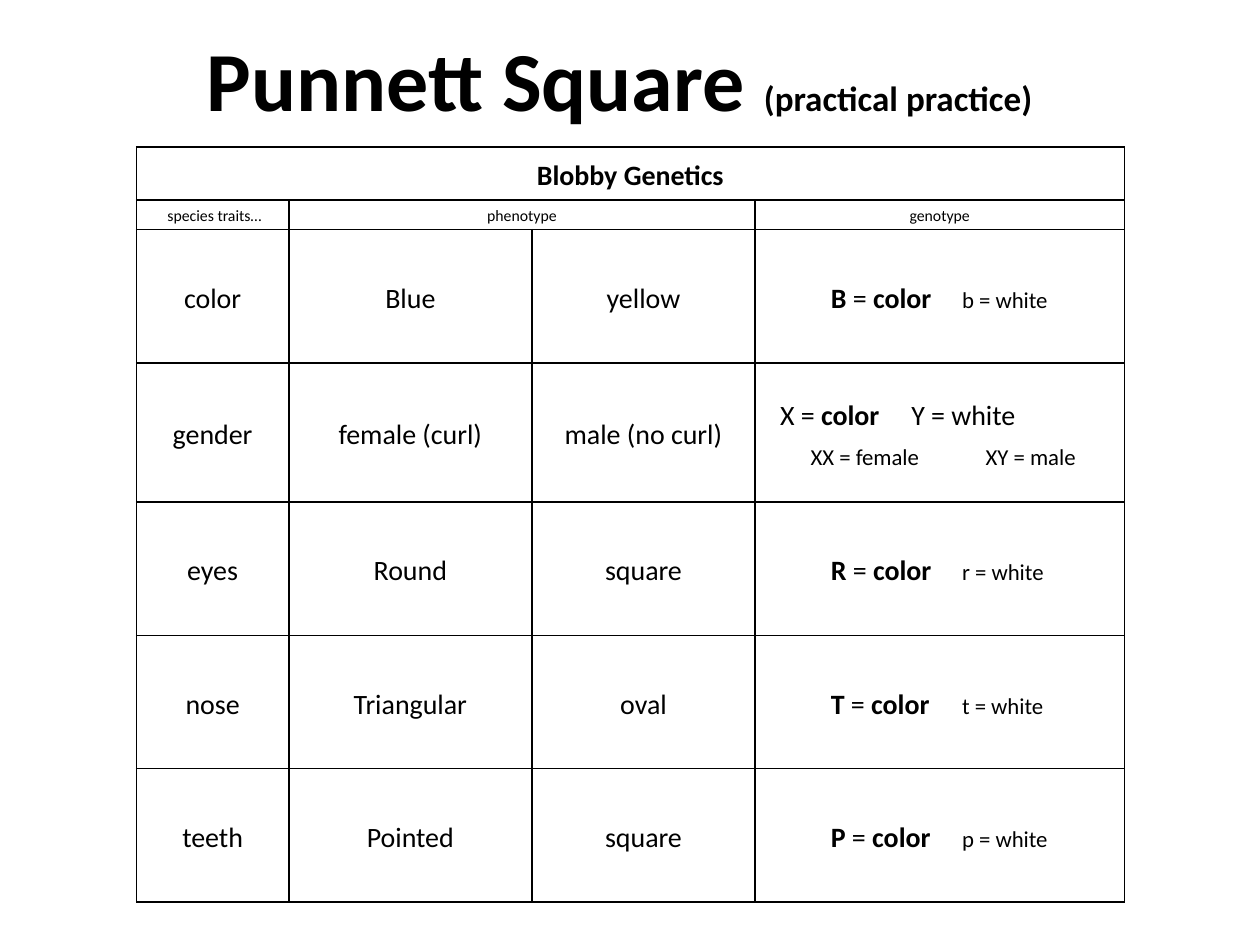
from lxml.etree import SubElement
from pptx import Presentation
from pptx.dml.color import RGBColor
from pptx.enum.text import MSO_ANCHOR, MSO_AUTO_SIZE, PP_ALIGN
from pptx.oxml.ns import qn
from pptx.util import Pt

BLACK = RGBColor(0, 0, 0)
FONT = "Calibri"
BODY_SIZE, SMALL_SIZE, HEADING_SIZE = 16, 13, 9
COLUMN_WIDTHS = [87, 139, 127.5, 211]
ROW_HEIGHTS = [30.3, 16.9, 76.3, 79.3, 76.3, 76.3, 76.3]
CELL_FORMAT = {
    "vertical_anchor": MSO_ANCHOR.MIDDLE,
    "margin_left": Pt(4.3),
    "margin_right": Pt(4.3),
    "margin_top": 0,
    "margin_bottom": 0,
}
TRAITS = [
    ("color", "Blue", "yellow", "B"),
    ("gender", "female (curl)", "male (no curl)", None),
    ("eyes", "Round", "square", "R"),
    ("nose", "Triangular", "oval", "T"),
    ("teeth", "Pointed", "square", "P"),
]


def set_format(target, values):
    for name, value in values.items():
        setattr(target, name, value)


def add_runs(paragraph, runs):
    for text, size, bold in runs:
        run = paragraph.add_run()
        run.text = text
        set_format(run.font, {"name": FONT, "size": Pt(size), "bold": bold})
        run.font.color.rgb = BLACK


def write_centred(cell, text, size=BODY_SIZE, bold=False):
    paragraph = cell.text_frame.paragraphs[0]
    set_format(paragraph, {"alignment": PP_ALIGN.CENTER, "line_spacing": 1.15})
    add_runs(paragraph, [(text, size, bold)])


def write_pair(paragraph, first_left, second_left, runs):
    set_format(paragraph, {"alignment": PP_ALIGN.LEFT, "line_spacing": 1.15})
    properties = paragraph._p.get_or_add_pPr()
    properties.set("marL", str(Pt(second_left)))
    properties.set("indent", str(Pt(first_left - second_left)))
    add_runs(paragraph, runs)


def write_genotype(cell, letter):
    write_pair(cell.text_frame.paragraphs[0], 39, 114, [
        (letter, BODY_SIZE, True),
        (" = ", BODY_SIZE, False),
        ("color", BODY_SIZE, True),
        (f"\t{letter.lower()} = white", SMALL_SIZE, False),
    ])


def write_gender_genotype(cell):
    write_pair(cell.text_frame.paragraphs[0], 10, 85, [
        ("X = ", BODY_SIZE, False),
        ("color", BODY_SIZE, True),
        ("\tY = white", BODY_SIZE, False),
    ])
    pairing = cell.text_frame.add_paragraph()
    pairing.space_before = Pt(4)
    write_pair(pairing, 27.5, 127.5, [("XX = female\tXY = male", SMALL_SIZE, False)])


def format_cell(cell):
    set_format(cell, CELL_FORMAT)
    properties = cell._tc.get_or_add_tcPr()
    for side in ("a:lnL", "a:lnR", "a:lnT", "a:lnB"):
        line = SubElement(properties, qn(side), w=str(Pt(1)))
        fill = SubElement(line, qn("a:solidFill"))
        SubElement(fill, qn("a:srgbClr"), val=str(BLACK))
    cell.fill.background()


def add_title(slide, left, top, width, height):
    frame = slide.shapes.add_textbox(Pt(left), Pt(top), Pt(width), Pt(height)).text_frame
    set_format(frame, {"word_wrap": False, "auto_size": MSO_AUTO_SIZE.SHAPE_TO_FIT_TEXT})
    add_runs(frame.paragraphs[0], [
        ("Punnett Square ", 48, True),
        ("(practical practice)", 20, True),
    ])


def add_genetics_table(slide, left, top, width, height):
    table = slide.shapes.add_table(
        len(ROW_HEIGHTS), len(COLUMN_WIDTHS), Pt(left), Pt(top), Pt(width), Pt(height)
    ).table
    set_format(table, {"first_row": False, "horz_banding": False})
    for column, column_width in zip(table.columns, COLUMN_WIDTHS):
        column.width = Pt(column_width)
    for row, row_height in zip(table.rows, ROW_HEIGHTS):
        row.height = Pt(row_height)
    for cell in table.iter_cells():
        format_cell(cell)

    table.cell(0, 0).merge(table.cell(0, 3))
    table.cell(1, 1).merge(table.cell(1, 2))
    write_centred(table.cell(0, 0), "Blobby Genetics", BODY_SIZE, True)
    for column, heading in ((0, " species traits…"), (1, "phenotype"), (3, "genotype")):
        write_centred(table.cell(1, column), heading, HEADING_SIZE)

    for row, (*labels, letter) in enumerate(TRAITS, start=2):
        for column, label in enumerate(labels):
            write_centred(table.cell(row, column), label)
        if letter:
            write_genotype(table.cell(row, 3), letter)
        else:
            write_gender_genotype(table.cell(row, 3))


def main():
    presentation = Presentation()
    set_format(presentation, {"slide_width": Pt(720), "slide_height": Pt(540)})
    slide = presentation.slides.add_slide(presentation.slide_layouts[6])
    add_title(slide, 111, 12.3, 498, 65.5)
    add_genetics_table(slide, 78, 84, sum(COLUMN_WIDTHS), sum(ROW_HEIGHTS))
    presentation.save("out.pptx")


if __name__ == "__main__":
    main()
